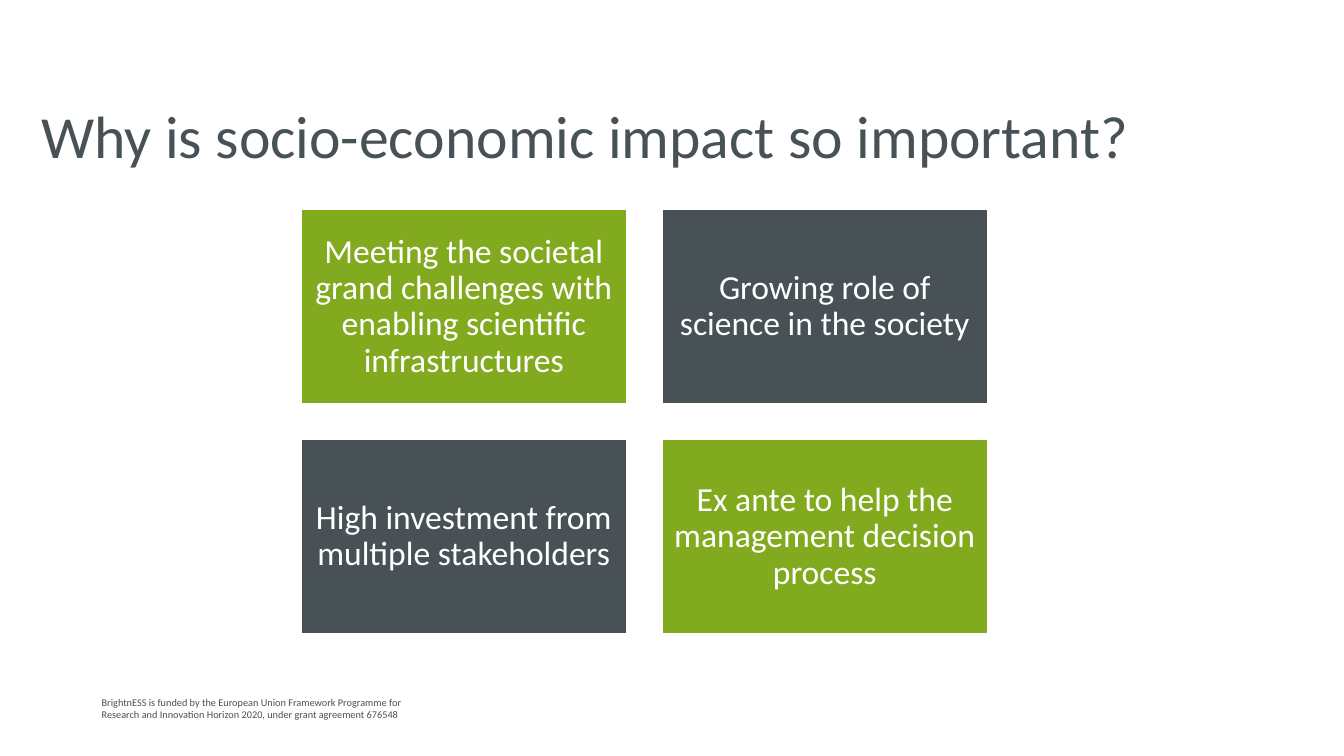
from pptx import Presentation
from pptx.dml.color import RGBColor
from pptx.enum import shapes, text
from pptx.util import Pt

GREEN, SLATE, WHITE = "82AA1E", "485156", "FFFFFF"


def color(code):
    return RGBColor.from_string(code)


def write(para, words, size, code):
    run = para.add_run()
    run.text = words
    run.font.name = "Calibri"
    run.font.size = Pt(size)
    run.font.color.rgb = color(code)


deck = Presentation()
deck.slide_width, deck.slide_height = Pt(720), Pt(405)
slide = deck.slides.add_slide(deck.slide_layouts[6])

foot = slide.shapes.add_textbox(Pt(47.4), Pt(369.4), Pt(197.3), Pt(27.4)).text_frame
foot.word_wrap = True
lines = [
    "BrightnESS is funded by the European Union Framework Programme for",
    "Research and Innovation Horizon 2020, under grant agreement 676548",
]
write(foot.paragraphs[0], lines[0], 5.5, SLATE)
write(foot.add_paragraph(), lines[1], 5.5, SLATE)

title = slide.shapes.add_textbox(Pt(15), Pt(38.2), Pt(611.3), Pt(67.7)).text_frame
title.word_wrap = True
title.vertical_anchor = text.MSO_ANCHOR.MIDDLE
write(title.paragraphs[0], "Why is socio-economic impact so important?", 32, SLATE)

cards = [
    ("Meeting the societal grand challenges with enabling scientific infrastructures", GREEN),
    ("Growing role of science in the society", SLATE),
    ("High investment from multiple stakeholders", SLATE),
    ("Ex ante to help the management decision process", GREEN),
]
wide, high, gap = 175.8, 105.6, 17.6
for i, (words, fill) in enumerate(cards):
    row, col = divmod(i, 2)
    left = 160.6 + col * (wide + gap)
    top = 111.6 + row * (high + gap)
    card = slide.shapes.add_shape(
        shapes.MSO_SHAPE.RECTANGLE, Pt(left), Pt(top), Pt(wide), Pt(high))
    card.shadow.inherit = False
    card.fill.solid()
    card.fill.fore_color.rgb = color(fill)
    card.line.color.rgb = color(WHITE)
    card.line.width = Pt(2)
    frame = card.text_frame
    frame.word_wrap = True
    frame.vertical_anchor = text.MSO_ANCHOR.MIDDLE
    frame.margin_left = frame.margin_right = Pt(5)
    frame.margin_top = frame.margin_bottom = Pt(5)
    para = frame.paragraphs[0]
    para.alignment = text.PP_ALIGN.CENTER
    para.line_spacing = 0.9
    write(para, words, 18, WHITE)

deck.save("out.pptx")
